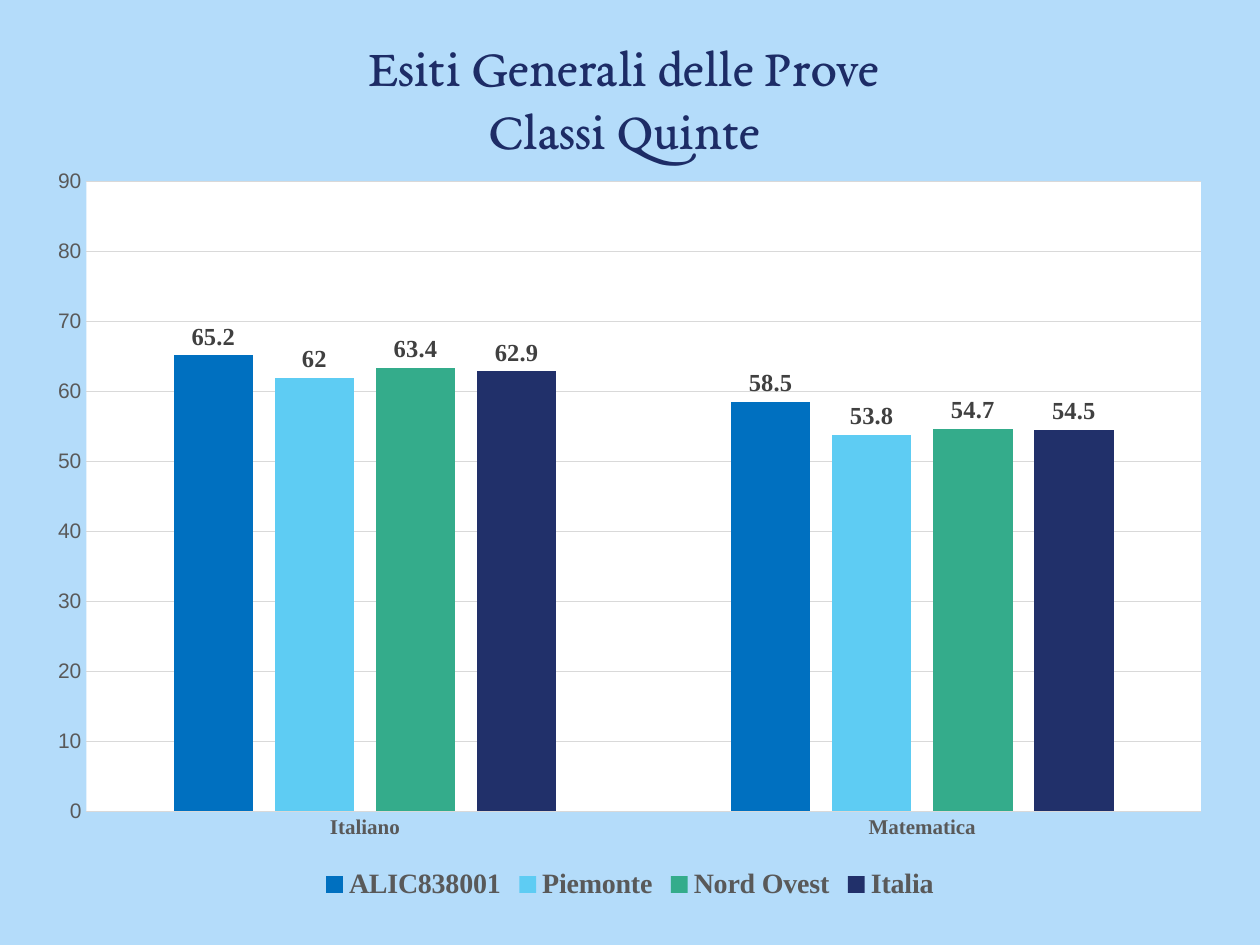
from lxml import etree
from pptx import Presentation
from pptx import util as u
from pptx.chart.data import CategoryChartData
from pptx.dml.color import RGBColor
from pptx.enum import chart as ch, text
from pptx.oxml import parse_xml
from pptx.oxml.ns import nsdecls, qn

COLORS = {
    "background": "B4DCFA", "title": "1D2C66", "axis": "595959",
    "grid": "D9D9D9", "label": "404040", "plot": "FFFFFF",
}
SUBJECTS = ["Italiano", "Matematica"]
RESULTS = [
    ("ALIC838001", (65.2, 58.5), "0070C0"),
    ("Piemonte", (62, 53.8), "5ECCF3"),
    ("Nord Ovest", (63.4, 54.7), "34AC8B"),
    ("Italia", (62.9, 54.5), "21306A"),
]


def rgb(name):
    return RGBColor.from_string(COLORS[name])


class SlideBuilder:
    SERIF = "Times New Roman"
    SANS = "Arial"
    TITLE = "EB Garamond"

    def __init__(self, slide):
        self.slide = slide
        fill = slide.background.fill
        fill.solid()
        fill.fore_color.rgb = rgb("background")

    def style_font(self, font, name, size, color, bold=False):
        font.name, font.size, font.bold = name, u.Pt(size), bold
        font.color.rgb = rgb(color)

    def title(self, lines, left, top, width, height):
        box = self.slide.shapes.add_textbox(*map(u.Inches, (left, top, width, height)))
        frame = box.text_frame
        frame.word_wrap = True
        frame.auto_size = text.MSO_AUTO_SIZE.SHAPE_TO_FIT_TEXT
        frame.text = "\n".join(lines)
        for paragraph in frame.paragraphs:
            paragraph.alignment = text.PP_ALIGN.CENTER
            self.style_font(paragraph.font, self.TITLE, 30, "title")

    def column_chart(self, categories, results, left, top, width, height):
        data = CategoryChartData()
        data.categories = categories
        for name, values, _ in results:
            data.add_series(name, values)
        chart = self.slide.shapes.add_chart(
            ch.XL_CHART_TYPE.COLUMN_CLUSTERED,
            *map(u.Inches, (left, top, width, height)), data).chart
        chart.has_title = False
        chart.font.name, chart.font.size = self.SANS, u.Pt(10)

        plot = chart.plots[0]
        plot.gap_width, plot.overlap, plot.vary_by_categories = 219, -27, False
        for series, (_, _, color) in zip(plot.series, results):
            series.format.fill.solid()
            series.format.fill.fore_color.rgb = RGBColor.from_string(color)
            labels = series.data_labels
            labels.show_value = True
            labels.position = ch.XL_LABEL_POSITION.OUTSIDE_END
            self.style_font(labels.font, self.SERIF, 14, "label", True)

        self.axes(chart)
        chart.has_legend = True
        chart.legend.position = ch.XL_LEGEND_POSITION.BOTTOM
        chart.legend.include_in_layout = False
        self.style_font(chart.legend.font, self.SERIF, 16, "axis", True)
        self.plot_area(chart, x=0.043, y=0.034, w=0.937, h=0.84)

    def axes(self, chart):
        category, value = chart.category_axis, chart.value_axis
        for axis in (category, value):
            axis.major_tick_mark = axis.minor_tick_mark = ch.XL_TICK_MARK.NONE
        self.style_font(category.tick_labels.font, self.SERIF, 12, "axis", True)
        self.style_font(value.tick_labels.font, self.SANS, 12, "axis")
        value.minimum_scale, value.maximum_scale, value.major_unit = 0, 90, 10
        value.format.line.fill.background()
        for line in (category.format.line, value.major_gridlines.format.line):
            line.color.rgb = rgb("grid")
            line.width = u.Pt(0.75)

    def plot_area(self, chart, **fractions):
        """Fill the plot area and fix its inner frame as fractions of the chart."""
        area = chart.plots[0]._element.getparent()
        for old in area.findall(qn("c:layout")):
            area.remove(old)
        layout = etree.Element(qn("c:layout"))
        manual = etree.SubElement(layout, qn("c:manualLayout"))
        settings = {"layoutTarget": "inner", "xMode": "edge", "yMode": "edge", **fractions}
        for tag, setting in settings.items():
            etree.SubElement(manual, qn(f"c:{tag}")).set("val", str(setting))
        area.insert(0, layout)
        area.append(parse_xml(
            f'<c:spPr {nsdecls("c", "a")}><a:solidFill>'
            f'<a:srgbClr val="{COLORS["plot"]}"/></a:solidFill></c:spPr>'))


def main():
    deck = Presentation()
    deck.slide_width, deck.slide_height = u.Inches(10), u.Inches(7.5)
    page = SlideBuilder(deck.slides.add_slide(deck.slide_layouts[6]))
    page.column_chart(SUBJECTS, RESULTS, 0.28, 1.24, 9.44, 5.95)
    page.title(["Esiti Generali delle Prove", "Classi Quinte"], 0.39, 0.22, 9.13, 1.11)
    deck.save("out.pptx")


if __name__ == "__main__":
    main()
